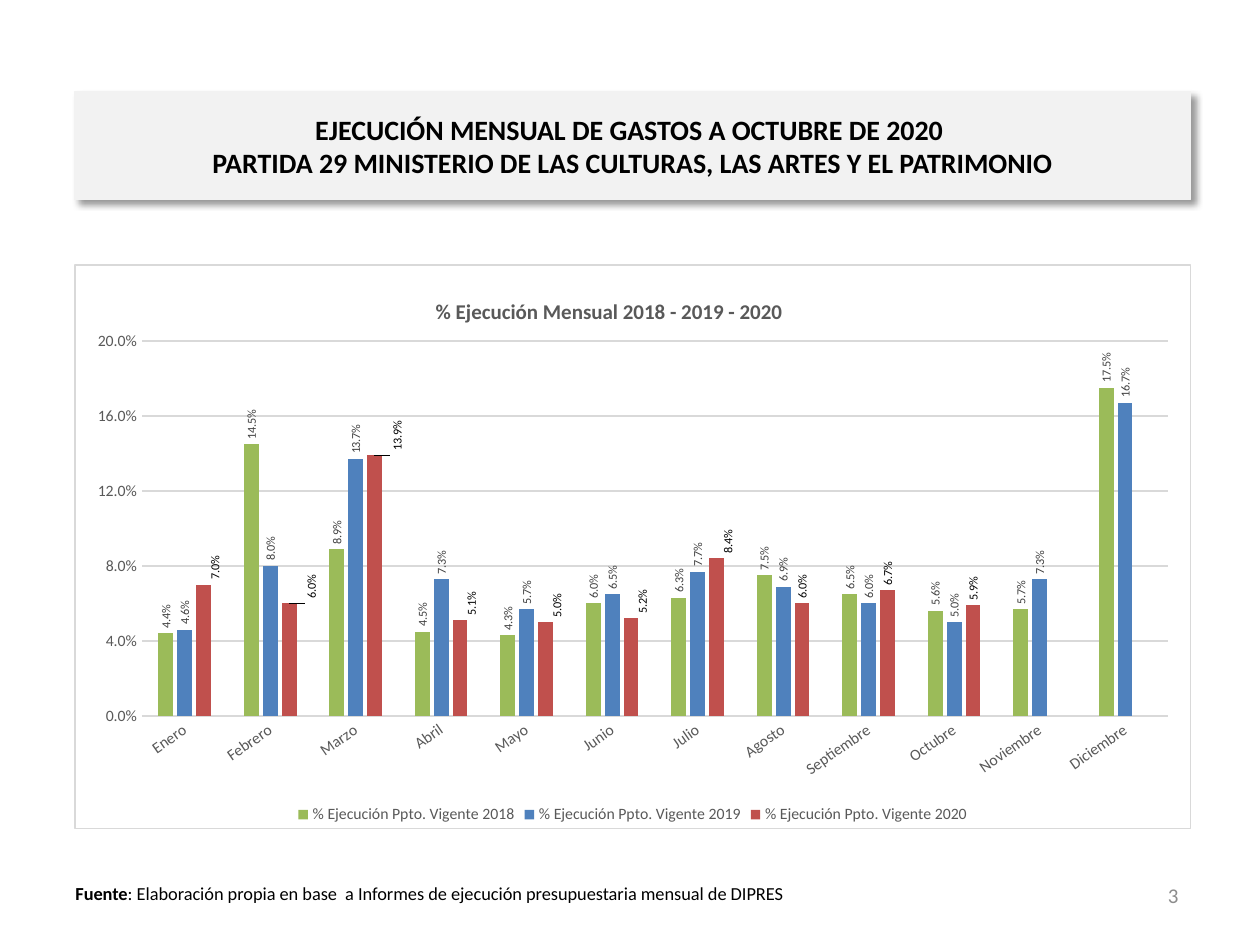
from dataclasses import dataclass

from lxml.etree import SubElement
from pptx import Presentation
from pptx.chart.data import CategoryChartData
from pptx.dml.color import RGBColor
from pptx.enum.chart import XL_CHART_TYPE as ChartType
from pptx.enum.chart import XL_LABEL_POSITION as LabelPos
from pptx.enum.chart import XL_LEGEND_POSITION as LegendPos
from pptx.enum.chart import XL_TICK_MARK as Tick
from pptx.enum.text import MSO_ANCHOR as Anchor
from pptx.enum.text import MSO_AUTO_SIZE as AutoSize
from pptx.enum.text import PP_ALIGN as Align
from pptx.oxml import parse_xml
from pptx.oxml.ns import nsdecls, qn
from pptx.util import Pt


@dataclass(frozen=True)
class Theme:
    font: str = "Calibri"
    ink: str = "000000"
    muted: str = "595959"
    label_ink: str = "404040"
    page_ink: str = "8C8C8C"
    band: str = "F2F2F2"
    rule: str = "D9D9D9"
    paper: str = "FFFFFF"
    title: float = 16
    chart_title: float = 12
    page: float = 12
    source: float = 10.5
    axis: float = 9
    label: float = 7


THEME = Theme()
LEFT, WIDTH = 42.5, 638
PERCENT = "0.0%"

MONTHS = ["Enero", "Febrero", "Marzo", "Abril", "Mayo", "Junio", "Julio",
          "Agosto", "Septiembre", "Octubre", "Noviembre", "Diciembre"]
# Year, bar colour, label colour, monthly share of the budget
SERIES = [
    (2018, "9BBB59", THEME.label_ink, [0.044, 0.145, 0.089, 0.045, 0.043, 0.06,
                                       0.063, 0.075, 0.065, 0.056, 0.057, 0.175]),
    (2019, "4F81BD", THEME.label_ink, [0.046, 0.08, 0.137, 0.073, 0.057, 0.065,
                                       0.077, 0.069, 0.06, 0.05, 0.073, 0.167]),
    (2020, "C0504D", THEME.ink, [0.07, 0.06, 0.139, 0.051, 0.05, 0.052,
                                 0.084, 0.06, 0.067, 0.059, None, None]),
]
# Shift to the right of the first 2020 labels, as a share of the chart width
LABEL_SHIFTS = [0.01, 0.02, 0.02, 0.01, 0.01, 0.01, 0.01]


def set_attrs(obj, **values):
    for name, value in values.items():
        setattr(obj, name, value)


def style_font(font, size, color, bold=False):
    set_attrs(font, name=THEME.font, size=Pt(size), bold=bold)
    font.color.rgb = RGBColor.from_string(color)


def style_line(line, color):
    line.color.rgb = RGBColor.from_string(color)
    line.width = Pt(0.75)


def manual_layout(inner=False, **places):
    layout = parse_xml(f"<c:layout {nsdecls('c')}><c:manualLayout/></c:layout>")
    values = {"layoutTarget": "inner"} if inner else {}
    if inner or "y" in places:
        values.update(xMode="edge", yMode="edge")
    for tag, value in {**values, **places}.items():
        SubElement(layout[0], qn(f"c:{tag}")).set("val", str(value))
    return layout


def add_title(s, text):
    title = s.shapes.title
    set_attrs(title, left=Pt(LEFT), top=Pt(52.5), width=Pt(WIDTH), height=Pt(61.5))
    title.fill.solid()
    title.fill.fore_color.rgb = RGBColor.from_string(THEME.band)
    style_line(title.line, THEME.band)
    title._element.spPr.append(parse_xml(
        f'<a:effectLst {nsdecls("a")}><a:outerShdw blurRad="{Pt(4)}" dist="{Pt(3)}"'
        ' dir="2700000" algn="tl" rotWithShape="0"><a:srgbClr val="000000">'
        '<a:alpha val="40000"/></a:srgbClr></a:outerShdw></a:effectLst>'))
    tf = title.text_frame
    set_attrs(tf, text=text, word_wrap=True, auto_size=AutoSize.NONE,
              vertical_anchor=Anchor.MIDDLE)
    p = tf.paragraphs[0]
    p.alignment = Align.CENTER
    for r in p.runs:
        style_font(r.font, THEME.title, THEME.ink, bold=True)


def add_text(s, box, runs, size, color, align=Align.LEFT, anchor=Anchor.TOP):
    tf = s.shapes.add_textbox(*map(Pt, box)).text_frame
    set_attrs(tf, word_wrap=True, vertical_anchor=anchor)
    p = tf.paragraphs[0]
    p.alignment = align
    for text, bold in runs:
        r = p.add_run()
        r.text = text
        style_font(r.font, size, color, bold)


def rotate_text(element, degrees):
    body = element.find(qn("c:txPr")).find(qn("a:bodyPr"))
    body.set("rot", str(degrees * 60000))
    body.set("vert", "horz")


def style_series(series, color, label_color):
    series.format.fill.solid()
    series.format.fill.fore_color.rgb = RGBColor.from_string(color)
    series.invert_if_negative = False
    labels = series.data_labels
    set_attrs(labels, show_value=True, position=LabelPos.OUTSIDE_END,
              number_format=PERCENT, number_format_is_linked=False)
    style_font(labels.font, THEME.label, label_color)
    rotate_text(labels._element, -90)


def shift_label(series, index, shift):
    label = series.points[index].data_label
    label.position = LabelPos.OUTSIDE_END
    style_font(label.font, THEME.label, THEME.ink)
    element = series.data_labels._element.findall(qn("c:dLbl"))[index]
    rotate_text(element, -90)
    element.insert(1, manual_layout(x=shift))
    element.insert(2, parse_xml(
        f'<c:numFmt {nsdecls("c")} formatCode="{PERCENT}" sourceLinked="0"/>'))


def style_axes(chart):
    for axis in (chart.category_axis, chart.value_axis):
        set_attrs(axis, major_tick_mark=Tick.NONE, minor_tick_mark=Tick.NONE)
        style_font(axis.tick_labels.font, THEME.axis, THEME.muted)
    style_line(chart.category_axis.format.line, THEME.rule)
    rotate_text(chart.category_axis._element, -35)
    values = chart.value_axis
    set_attrs(values, minimum_scale=0, maximum_scale=0.2, major_unit=0.04,
              has_major_gridlines=True)
    values.format.line.fill.background()
    style_line(values.major_gridlines.format.line, THEME.rule)
    set_attrs(values.tick_labels, number_format=PERCENT,
              number_format_is_linked=False)


def add_chart(s):
    data = CategoryChartData(number_format=PERCENT)
    data.categories = MONTHS
    for year, _, _, values in SERIES:
        data.add_series(f"% Ejecución Ppto. Vigente {year}", values)
    chart = s.shapes.add_chart(ChartType.COLUMN_CLUSTERED, Pt(LEFT), Pt(151),
                               Pt(WIDTH), Pt(323), data).chart
    style_font(chart.font, 10, THEME.ink)
    # Frame and plot area
    space = chart._chartSpace
    space.find(qn("c:txPr")).addprevious(parse_xml(
        f'<c:spPr {nsdecls("c", "a")}><a:solidFill><a:srgbClr val="{THEME.paper}"/>'
        f'</a:solidFill><a:ln w="{Pt(0.75)}"><a:solidFill>'
        f'<a:srgbClr val="{THEME.rule}"/></a:solidFill></a:ln></c:spPr>'))
    plot_area = space.chart.plotArea
    for old in plot_area.findall(qn("c:layout")):
        plot_area.remove(old)
    plot_area.insert(0, manual_layout(inner=True, x=0.06, y=0.135, w=0.92, h=0.665))
    # Title
    title = chart.chart_title
    p = title.text_frame.paragraphs[0]
    r = p.add_run()
    r.text = "% Ejecución Mensual 2018 - 2019 - 2020"
    style_font(r.font, THEME.chart_title, THEME.muted, bold=True)
    for old in title._element.findall(qn("c:layout")):
        title._element.remove(old)
    title._element.find(qn("c:tx")).addnext(manual_layout(x=0.32, y=0.05))
    # Legend, axes and columns
    chart.has_legend = True
    set_attrs(chart.legend, position=LegendPos.BOTTOM, include_in_layout=False)
    style_font(chart.legend.font, THEME.axis, THEME.muted)
    style_axes(chart)
    plot = chart.plots[0]
    set_attrs(plot, gap_width=219, overlap=-27, vary_by_categories=False)
    for series, (_, color, label_color, _) in zip(plot.series, SERIES):
        style_series(series, color, label_color)
    for index, shift in enumerate(LABEL_SHIFTS):
        shift_label(plot.series[2], index, shift)


def main():
    prs = Presentation()
    set_attrs(prs, slide_width=Pt(720), slide_height=Pt(540))
    s = prs.slides.add_slide(prs.slide_layouts[5])
    add_title(s, "EJECUCIÓN MENSUAL DE GASTOS A OCTUBRE DE 2020 \v"
                 "PARTIDA 29 MINISTERIO DE LAS CULTURAS, LAS ARTES Y EL PATRIMONIO")
    add_chart(s)
    # Source and page number
    add_text(s, (36, 500.5, 425.5, 20),
             [("Fuente", True), (": Elaboración propia en base  a Informes de "
                                 "ejecución presupuestaria mensual de DIPRES", False)],
             THEME.source, THEME.ink)
    add_text(s, (512.5, 497, 168, 29), [("3", False)], THEME.page, THEME.page_ink,
             Align.RIGHT, Anchor.MIDDLE)
    prs.save("out.pptx")


if __name__ == "__main__":
    main()
